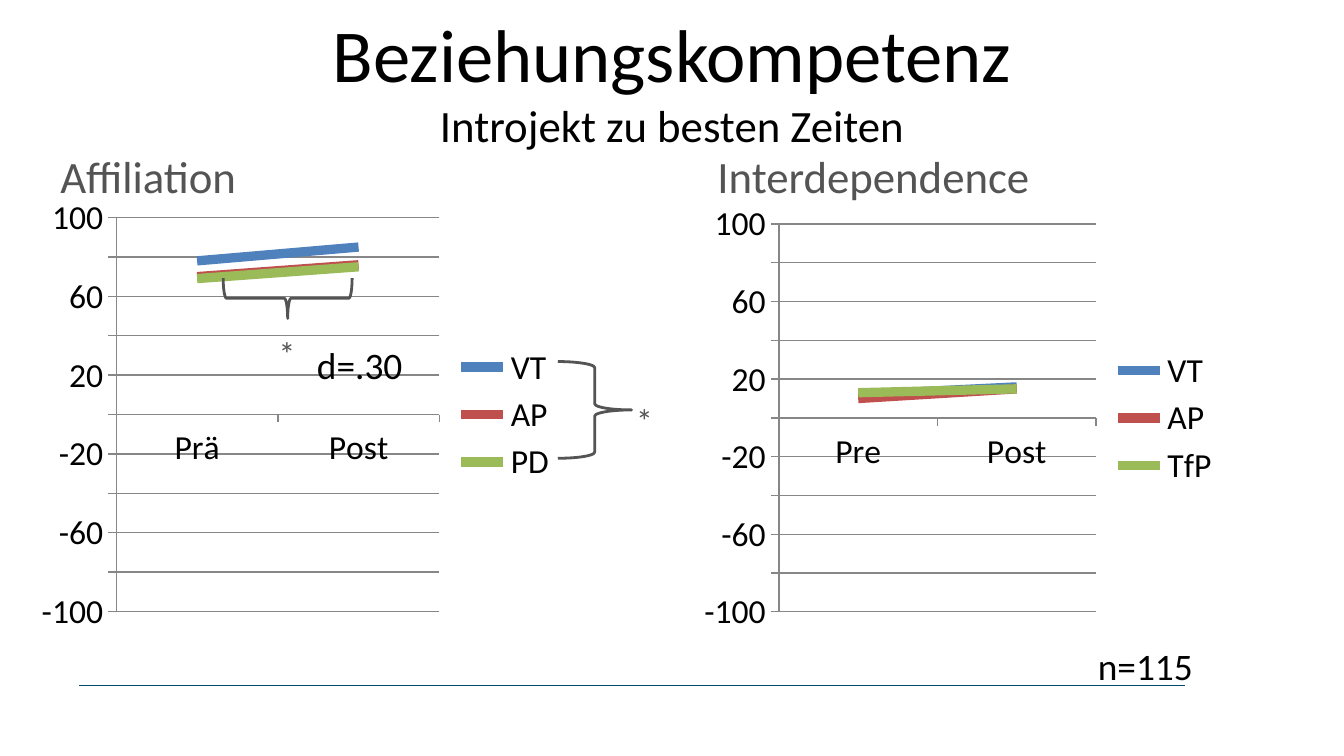
from dataclasses import dataclass

from lxml import etree
from pptx import Presentation
from pptx import util as u
from pptx.chart.data import CategoryChartData
from pptx.dml.color import RGBColor
from pptx.enum import chart as ch, shapes, text
from pptx.oxml.ns import qn


@dataclass(frozen=True)
class Theme:
    font: str = "Calibri"
    black: str = "000000"
    grey: str = "545455"
    rule: str = "004A6F"
    grid: str = "878787"
    series: tuple = ("4F81BD", "C0504D", "9BBB59")
    title: int = 40
    heading: int = 24
    note: int = 20
    label: int = 18


T = Theme()


def set_font(font, size, color):
    font.name = T.font
    font.size = u.Pt(size)
    font.color.rgb = RGBColor.from_string(color)


def set_line(line, color, width):
    line.color.rgb = RGBColor.from_string(color)
    line.width = u.Pt(width)


def add_text(s, box, content, sizes, color, align=text.PP_ALIGN.LEFT, wrap=True):
    sp = s.shapes.add_textbox(*map(u.Inches, box))
    tf = sp.text_frame
    tf.word_wrap = wrap
    tf.vertical_anchor = text.MSO_ANCHOR.TOP
    tf.text = content
    p = tf.paragraphs[0]
    p.alignment = align
    for r, size in zip(p.runs, sizes):
        set_font(r.font, size, color)
    return tf


def add_title(s, box):
    add_text(s, box, "Beziehungskompetenz\vIntrojekt zu besten Zeiten",
             (T.title, T.heading), T.black, text.PP_ALIGN.CENTER)


def add_brace(s, box, rotation=0):
    sp = s.shapes.add_shape(shapes.MSO_SHAPE.RIGHT_BRACE, *map(u.Inches, box))
    sp.shadow.inherit = False
    sp.fill.background()
    set_line(sp.line, T.grey, 1.5)
    sp.rotation = rotation


def add_line_chart(s, box, categories, series):
    data = CategoryChartData()
    data.categories = categories
    for name, values in series.items():
        data.add_series(name, values)
    chart = s.shapes.add_chart(ch.XL_CHART_TYPE.LINE, *map(u.Inches, box), data).chart
    set_font(chart.font, T.label, T.black)
    chart.has_title = False
    chart.has_legend = True
    chart.legend.position = ch.XL_LEGEND_POSITION.RIGHT
    chart.legend.include_in_layout = False

    axis = chart.value_axis
    axis.minimum_scale, axis.maximum_scale, axis.major_unit = -100, 100, 20
    axis.has_major_gridlines = True
    set_line(axis.major_gridlines.format.line, T.grid, 0.75)
    for ax in (axis, chart.category_axis):
        ax.major_tick_mark = ch.XL_TICK_MARK.OUTSIDE
        set_line(ax.format.line, T.grid, 0.75)

    plot = chart.plots[0]
    plot.vary_by_categories = False
    for ser, color in zip(plot.series, T.series):
        ser.smooth = False
        ser.marker.style = ch.XL_MARKER_STYLE.NONE
        set_line(ser.format.line, color, 5)


def add_affiliation(s, x, y):
    add_line_chart(s, (x, y + 0.34, 4.02, 3.37), ("Prä", "Post"),
                   {"VT": (78, 85), "AP": (70, 76), "PD": (69, 75)})
    add_text(s, (x + 0.12, y, 1.65, 0.5), "Affiliation", (T.heading,), T.grey)
    add_brace(s, (x + 3.92, y + 1.63, 0.55, 0.72))
    add_brace(s, (x + 1.76, y + 0.68, 0.3, 0.96), 90)
    for dx, dy in ((4.21, 1.87), (1.55, 1.37)):
        add_text(s, (x + dx, y + dy, 0.71, 0.4), "*", (T.label,), T.grey,
                 text.PP_ALIGN.CENTER)
    add_text(s, (x + 2.03, y + 1.44, 0.84, 0.44), "d=.30", (T.note,), T.black, wrap=False)


def add_interdependence(s, x, y):
    add_line_chart(s, (x, y + 0.39, 4.02, 3.32), ("Pre", "Post"),
                   {"VT": (12, 16), "AP": (10, 15), "TfP": (13, 15)})
    add_text(s, (x + 0.08, y, 2.83, 0.5), "Interdependence", (T.heading,), T.grey)


def add_footer(s, x, y, width):
    line = s.shapes.add_connector(shapes.MSO_CONNECTOR.STRAIGHT,
                                  *map(u.Inches, (x, y, x + width, y)))
    set_line(line.line, T.rule, 0.75)
    etree.SubElement(line._element.spPr, qn("a:effectLst"))
    add_text(s, (x + width - 0.75, y - 0.36, 1.1, 0.44), "n=115", (T.note,), T.black)


def main():
    prs = Presentation()
    prs.slide_width = u.Inches(10)
    prs.slide_height = prs.slide_width * 9 // 16
    s = prs.slides.add_slide(prs.slide_layouts[6])
    add_footer(s, 0.59, 5.1, 8.23)
    add_title(s, (0.5, 0.01, 9, 0.94))
    add_interdependence(s, 5.16, 1.06)
    add_affiliation(s, 0.23, 1.06)
    prs.save("out.pptx")


if __name__ == "__main__":
    main()
